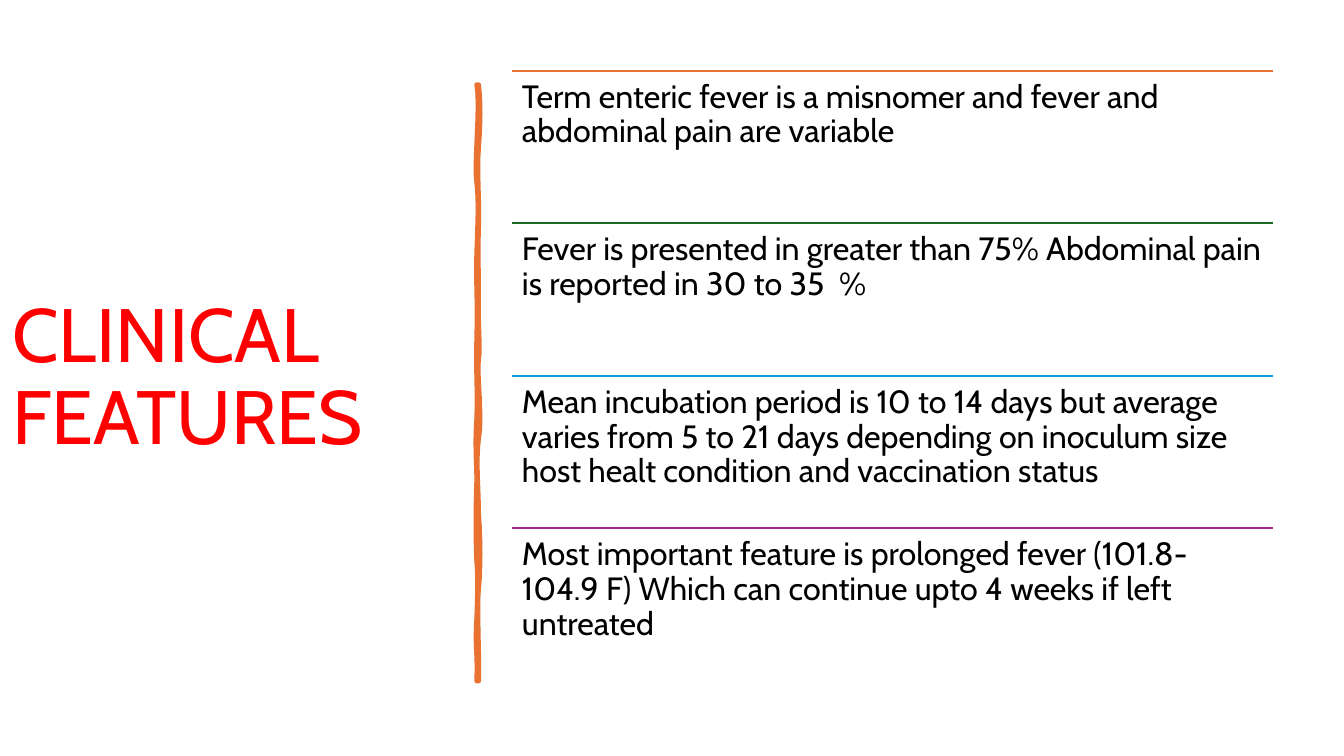
from dataclasses import dataclass
from itertools import pairwise

from lxml.etree import SubElement
from pptx import Presentation
from pptx.dml.color import RGBColor as Color
from pptx.enum.shapes import MSO_CONNECTOR as Connector
from pptx.enum.text import MSO_ANCHOR as Anchor, MSO_AUTO_SIZE as AutoSize, PP_ALIGN as Align
from pptx.oxml.ns import qn
from pptx.util import Pt


@dataclass(frozen=True)
class Theme:
    """Colours, font and type sizes of the slide."""
    font: str = "Cabin"
    title_size: float = 54
    body_size: float = 23
    title_color: str = "FF0000"
    body_color: str = "000000"
    brush_color: str = "E97132"
    brush_width: float = 3.25
    rule_width: float = 1.5
    line_spacing: float = 0.9


THEME = Theme()

FEATURES = [
    ("E97132", "Term enteric fever is a misnomer and fever and abdominal pain are variable"),
    ("196B24", "Fever is presented in greater than 75% Abdominal pain is reported in 30 to 35  %"),
    ("0F9ED5", "Mean incubation period is 10 to 14 days but average varies from 5 to 21 days "
               "depending on inoculum size host healt condition and vaccination status"),
    ("A02B93", "Most important feature is prolonged fever (101.8-104.9 F) Which can continue "
               "upto 4 weeks if left untreated"),
]

RIGHT_EDGE = [
    (2.9, 0), (4.3, 13), (4.3, 25), (2.9, 45), (1.4, 64), (3.6, 80), (2.9, 102),
    (2.2, 125), (2.9, 128), (2.9, 151), (2.2, 174), (4.3, 186), (2.9, 196),
    (1.4, 206), (5.8, 238), (2.9, 253), (0.7, 269), (2.9, 288), (2.9, 307),
    (4.3, 325), (4.3, 346), (2.9, 360), (1.4, 374), (3.6, 408), (2.9, 426),
]
LEFT_EDGE = [
    (1.4, 426), (2.2, 405), (0, 403), (1.4, 381), (2.2, 359), (2.2, 350), (1.4, 341),
    (0.7, 331), (0.7, 296), (1.4, 283), (1.4, 270), (0, 260), (1.4, 238),
    (2.2, 217), (0.7, 208), (1.4, 181), (2.2, 154), (0.7, 142), (1.4, 120),
    (2.2, 96), (2.9, 84), (1.4, 70), (-0.7, 57), (4.3, 14), (1.4, 0),
]


def set_attributes(target, values):
    """Set each named value on the target."""
    for name, value in values.items():
        setattr(target, name, value)


def write_text(shape, text, size, color, anchor, inset):
    """Fill a shape with one left-aligned paragraph."""
    frame = shape.text_frame
    set_attributes(frame, {"word_wrap": True, "auto_size": AutoSize.NONE, "vertical_anchor": anchor})
    set_attributes(frame, {f"margin_{side}": Pt(inset) for side in ("left", "top", "right", "bottom")})
    para = frame.paragraphs[0]
    set_attributes(para, {"alignment": Align.LEFT, "line_spacing": THEME.line_spacing})
    span = para.add_run()
    span.text = text
    set_attributes(span.font, {"name": THEME.font, "size": Pt(size)})
    span.font.color.rgb = Color.from_string(color)


def add_title(page, box, text):
    """Place the title placeholder in the box."""
    title = page.shapes.title
    set_attributes(title, dict(zip(("left", "top", "width", "height"), map(Pt, box))))
    write_text(title, text, THEME.title_size, THEME.title_color, Anchor.MIDDLE, 7.2)


def sample_curve(points, steps=8):
    """Return points along a chain of cubic curves."""
    samples = [points[0]]
    anchors = range(0, len(points), 3)
    for first, last in pairwise(anchors):
        controls = points[first:last + 1]
        for step in range(1, steps + 1):
            t = step / steps
            weights = ((1 - t) ** 3, 3 * t * (1 - t) ** 2, 3 * t * t * (1 - t), t ** 3)
            samples.append(tuple(sum(w * p[axis] for w, p in zip(weights, controls))
                                 for axis in (0, 1)))
    return samples


def add_brush_stroke(page, left, top):
    """Draw the uneven vertical divider from its top-left point."""
    outline = [(Pt(left + x), Pt(top + y))
               for x, y in sample_curve(RIGHT_EDGE) + sample_curve(LEFT_EDGE)]
    builder = page.shapes.build_freeform(*outline[0])
    builder.add_line_segments(outline[1:], close=True)
    stroke = builder.convert_to_shape()
    stroke.shadow.inherit = False
    color = Color.from_string(THEME.brush_color)
    stroke.fill.solid()
    stroke.fill.fore_color.rgb = color
    stroke.line.color.rgb = color
    stroke.line.width = Pt(THEME.brush_width)
    outline_xml = stroke.element.spPr.find(qn("a:ln"))
    outline_xml.set("cap", "rnd")
    SubElement(outline_xml, qn("a:round"))


def add_feature(page, box, color, text):
    """Place one ruled statement in the box."""
    left, top, width, height = box
    rule = page.shapes.add_connector(Connector.STRAIGHT, Pt(left), Pt(top), Pt(left + width), Pt(top))
    rule.line.color.rgb = Color.from_string(color)
    rule.line.width = Pt(THEME.rule_width)
    SubElement(rule.element.spPr, qn("a:effectLst"))
    statement = page.shapes.add_textbox(*map(Pt, box))
    write_text(statement, text, THEME.body_size, THEME.body_color, Anchor.TOP, 7)


def add_feature_list(page, box, features):
    """Stack the statements in equal rows of the box."""
    left, top, width, height = box
    row = height / len(features)
    for index, (color, text) in enumerate(features):
        add_feature(page, (left, top + index * row, width, row), color, text)


def main():
    """Build and save the slide."""
    deck = Presentation()
    set_attributes(deck, {"slide_width": Pt(960), "slide_height": Pt(540)})
    page = deck.slides.add_slide(deck.slide_layouts[5])
    add_title(page, (1.5, 50.5, 317.5, 440), "CLINICAL FEATURES")
    add_brush_stroke(page, 339.1, 60.5)
    add_feature_list(page, (365.8, 50.4, 543.6, 436), FEATURES)
    deck.save("out.pptx")


if __name__ == "__main__":
    main()
